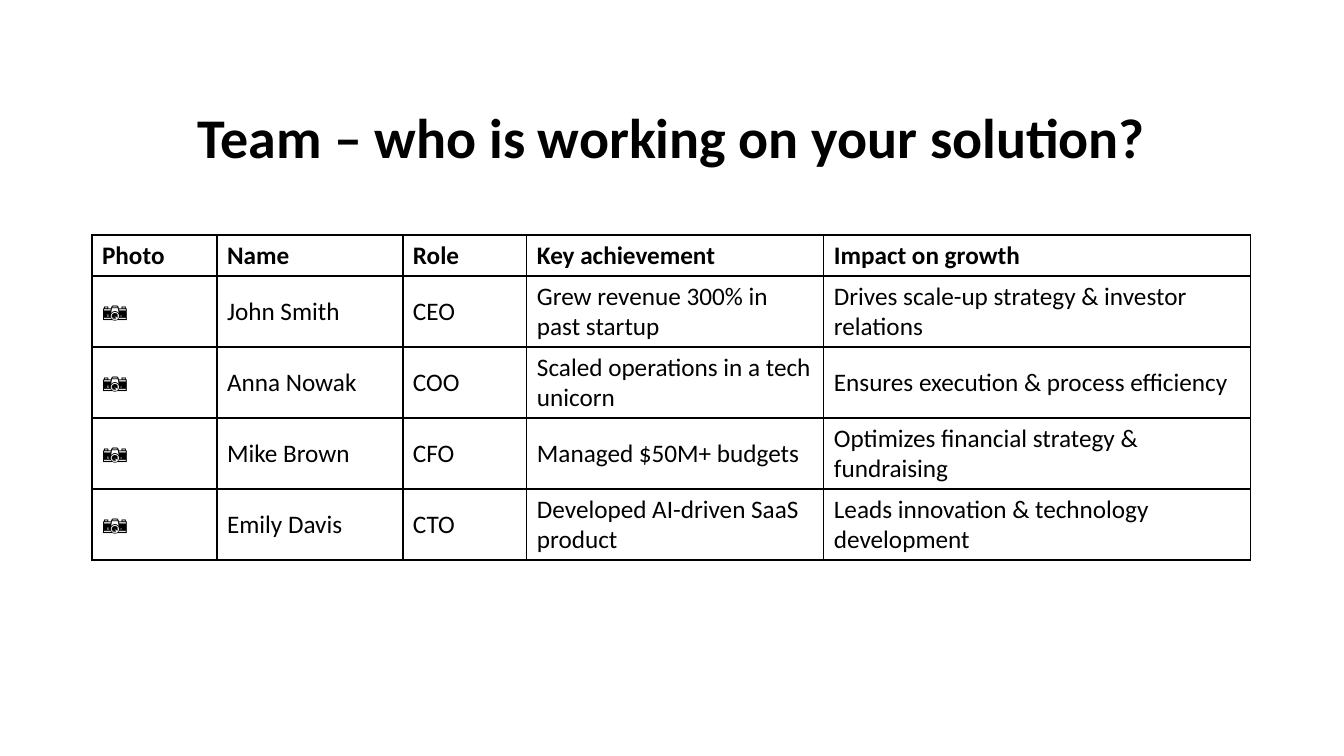
from lxml.etree import SubElement
from pptx import Presentation
from pptx.dml.color import RGBColor
from pptx.enum.text import MSO_ANCHOR, PP_ALIGN
from pptx.oxml.ns import qn
from pptx.util import Emu, Pt

COLORS = {"ink": "000000", "paper": "FFFFFF"}
EMU_PER_PX = 12192000 / 1344

COLUMN_WIDTHS = [125, 186, 124, 297, 427]
HEADER_HEIGHT = 41
MEMBER_HEIGHT = 71
HEADINGS = ["Photo", "Name", "Role", "Key achievement", "Impact on growth"]
MEMBERS = [
    ["John Smith", "CEO", "Grew revenue 300% in past startup",
     "Drives scale-up strategy & investor relations"],
    ["Anna Nowak", "COO", "Scaled operations in a tech unicorn",
     "Ensures execution & process efficiency"],
    ["Mike Brown", "CFO", "Managed $50M+ budgets",
     "Optimizes financial strategy & fundraising"],
    ["Emily Davis", "CTO", "Developed AI-driven SaaS product",
     "Leads innovation & technology development"],
]


def px(length):
    return Emu(round(length * EMU_PER_PX))


def write(frame, text, *, size, font, color, bold=False,
          align=PP_ALIGN.LEFT, spacing=1.0):
    para = frame.paragraphs[0]
    para.alignment = align
    para.line_spacing = spacing
    span = para.add_run()
    span.text = text
    span.font.name = font
    span.font.size = Pt(size)
    span.font.bold = bold
    span.font.color.rgb = RGBColor.from_string(color)


class TeamSlide:
    font = "Calibri"
    ink = COLORS["ink"]
    paper = COLORS["paper"]
    title_size = 40
    table_size = 18

    def __init__(self, deck):
        self.slide = deck.slides.add_slide(deck.slide_layouts[6])

    def title(self, text, left, top, width, height):
        box = self.slide.shapes.add_textbox(px(left), px(top), px(width), px(height))
        frame = box.text_frame
        frame.word_wrap = True
        frame.vertical_anchor = MSO_ANCHOR.BOTTOM
        write(frame, text, size=self.title_size, font=self.font, color=self.ink,
              bold=True, align=PP_ALIGN.CENTER, spacing=0.9)

    def table(self, rows, left, top, widths, heights):
        table = self.slide.shapes.add_table(
            len(rows), len(widths), px(left), px(top),
            px(sum(widths)), px(sum(heights))).table
        table.horz_banding = False
        for column, width in zip(table.columns, widths):
            column.width = px(width)
        for row, height in zip(table.rows, heights):
            row.height = px(height)
        for row_index, texts in enumerate(rows):
            for column_index, text in enumerate(texts):
                cell = table.cell(row_index, column_index)
                cell.vertical_anchor = MSO_ANCHOR.MIDDLE
                write(cell.text_frame, text, size=self.table_size, font=self.font,
                      color=self.ink, bold=row_index == 0)
                self.borders(cell)
                cell.fill.solid()
                cell.fill.fore_color.rgb = RGBColor.from_string(self.paper)

    def borders(self, cell):
        properties = cell._tc.get_or_add_tcPr()
        for side in ("a:lnL", "a:lnR", "a:lnT", "a:lnB"):
            line = SubElement(properties, qn(side), w=str(Pt(1)))
            fill = SubElement(line, qn("a:solidFill"))
            SubElement(fill, qn("a:srgbClr"), val=self.ink)


def main():
    deck = Presentation()
    deck.slide_width = px(1344)
    deck.slide_height = px(756)
    team = TeamSlide(deck)
    team.title("Team – who is working on your solution?", 92, 30, 1159, 146)
    rows = [HEADINGS] + [["📷", *member] for member in MEMBERS]
    heights = [HEADER_HEIGHT] + [MEMBER_HEIGHT] * len(MEMBERS)
    team.table(rows, 92, 235, COLUMN_WIDTHS, heights)
    deck.save("out.pptx")


if __name__ == "__main__":
    main()
